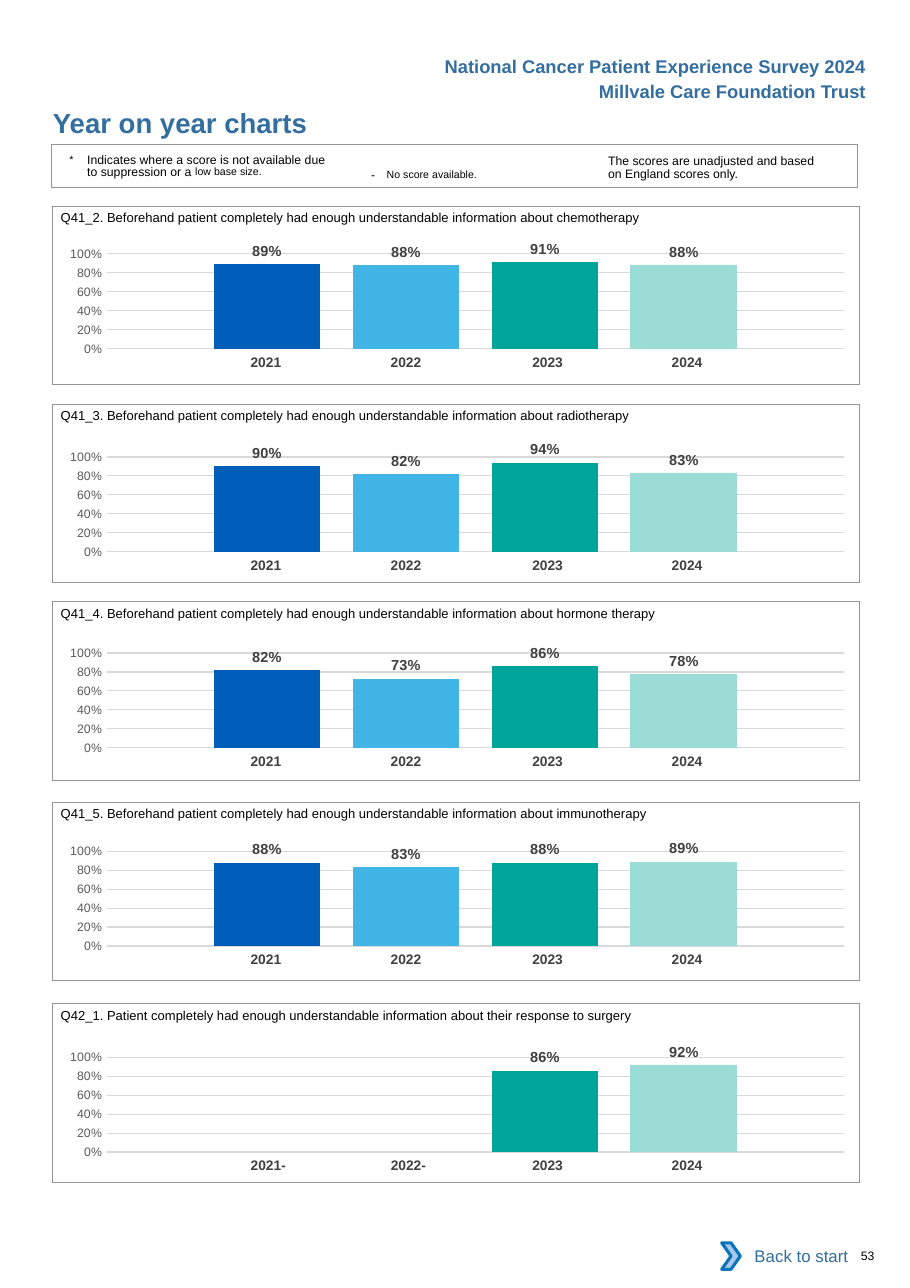
import pptx
import pptx.chart.data
import pptx.dml.color
import pptx.enum.chart
import pptx.enum.shapes
import pptx.enum.text
import pptx.oxml
import pptx.util
from lxml import etree

Cm, Pt = pptx.util.Cm, pptx.util.Pt
RGBColor = pptx.dml.color.RGBColor
Align = pptx.enum.text.PP_ALIGN
Anchor = pptx.enum.text.MSO_ANCHOR
Shape = pptx.enum.shapes.MSO_SHAPE

BLACK = RGBColor(0x00, 0x00, 0x00)
WHITE = RGBColor(0xFF, 0xFF, 0xFF)
BLUE = RGBColor(0x33, 0x6E, 0x9F)
FRAME = RGBColor(0x93, 0x95, 0x98)
YEAR = RGBColor(0x41, 0x40, 0x42)
LABEL = RGBColor(0x40, 0x40, 0x40)
TICK = RGBColor(0x59, 0x59, 0x59)
GRID = RGBColor(0xD9, 0xD9, 0xD9)
ARROW = RGBColor(0xA8, 0xC7, 0xE9)
EDGE = RGBColor(0x0A, 0x74, 0xBB)
BARS = [RGBColor(0x00, 0x5E, 0xB8), RGBColor(0x41, 0xB6, 0xE6),
        RGBColor(0x00, 0xA4, 0x99), RGBColor(0x9C, 0xDC, 0xD7)]

YEARS = ["2021", "2022", "2023", "2024"]
WIDTHS = [3.23, 3.23, 3.4, 3.23]
RIGHTS = [0, 0, 0.1, 0.3]
PLOT = {"x": 0.079, "y": 0.145, "w": 0.915, "h": 0.666}
PLAIN = "{2D5ABB26-0587-4C30-8999-92F81FD0307C}"
ASKED = "Beforehand patient completely had enough understandable information about "

# question, frame top, chart top, scores
PANELS = [
    ("Q41_2. " + ASKED + "chemotherapy", 4.75, 5.38, [0.89, 0.88, 0.91, 0.88]),
    ("Q41_3. " + ASKED + "radiotherapy", 9.32, 10.06, [0.9, 0.82, 0.94, 0.83]),
    ("Q41_4. " + ASKED + "hormone therapy", 13.87, 14.58, [0.82, 0.73, 0.86, 0.78]),
    ("Q41_5. " + ASKED + "immunotherapy", 18.49, 19.15, [0.88, 0.83, 0.88, 0.89]),
    ("Q42_1. Patient completely had enough understandable information about "
     "their response to surgery", 23.14, 23.9, [None, None, 0.86, 0.92]),
]


class Page:
    def __init__(self, slide, face="Arial"):
        self.slide = slide
        self.face = face

    def style(self, font, size, color, bold=False):
        font.name, font.size, font.bold = self.face, Pt(size), bold
        font.color.rgb = color

    def fill(self, frame, words, size, color, bold=False, align=Align.LEFT, pad=(0, 0, 0, 0)):
        """Put one styled paragraph in a text frame, with margins left, top, right, bottom."""
        frame.word_wrap = True
        frame.margin_left, frame.margin_top, frame.margin_right, frame.margin_bottom = map(Cm, pad)
        para = frame.paragraphs[0]
        para.text = words
        para.alignment = align
        self.style(para.font, size, color, bold)
        return para

    def title(self, words, x, y, w, h):
        head = self.slide.shapes.title
        head.left, head.top, head.width, head.height = map(Cm, (x, y, w, h))
        head.text_frame.vertical_anchor = Anchor.TOP
        self.fill(head.text_frame, words, 18, BLUE, True)

    def text(self, words, x, y, w, h, size, color=BLACK, **look):
        box = self.slide.shapes.add_textbox(*map(Cm, (x, y, w, h)))
        return self.fill(box.text_frame, words, size, color, **look)

    def note(self, parts, x, y, w, h, pad, lead=None):
        """Write runs given as text, size, baseline rise and letter spacing."""
        para = self.text("", x, y, w, h, 8, pad=pad)
        para.line_spacing = lead
        for words, size, rise, space in parts:
            run = para.add_run()
            run.text = words
            run.font.size = Pt(size)
            props = run.font._element
            props.set("baseline", str(rise * 1000))
            props.set("spc", str(space))
        return para

    def shape(self, kind, x, y, w, h, fill=None, line=None, weight=0.5):
        item = self.slide.shapes.add_shape(kind, *map(Cm, (x, y, w, h)))
        item.shadow.inherit = False
        if fill is None:
            item.fill.background()
        else:
            item.fill.solid()
            item.fill.fore_color.rgb = fill
        if line is None:
            item.line.fill.background()
        else:
            item.line.color.rgb = line
            item.line.width = Pt(weight)
        return item

    def chart(self, scores, x, y, w, h):
        data = pptx.chart.data.CategoryChartData(number_format="0%")
        data.categories = ["1"]
        for i, score in enumerate(scores, 1):
            data.add_series(f"Series {i}", [score])
        kind = pptx.enum.chart.XL_CHART_TYPE.COLUMN_CLUSTERED
        chart = self.slide.shapes.add_chart(kind, *map(Cm, (x, y, w, h)), data).chart
        chart.has_legend = chart.has_title = False
        chart.font.name, chart.font.size = "Calibri", Pt(10)
        chart.category_axis.visible = False
        axis = chart.value_axis
        axis.minimum_scale, axis.maximum_scale, axis.major_unit = 0, 1, 0.2
        axis.major_tick_mark = pptx.enum.chart.XL_TICK_MARK.NONE
        axis.format.line.fill.background()
        axis.major_gridlines.format.line.color.rgb = GRID
        axis.major_gridlines.format.line.width = Pt(0.75)
        axis.tick_labels.number_format = "0%"
        axis.tick_labels.number_format_is_linked = False
        self.style(axis.tick_labels.font, 8, TICK)
        plot = chart.plots[0]
        plot.gap_width, plot.overlap, plot.vary_by_categories = 200, -30, False
        for series, color in zip(plot.series, BARS):
            series.format.fill.solid()
            series.format.fill.fore_color.rgb = color
            labels = series.data_labels
            labels.show_value = True
            labels.number_format, labels.number_format_is_linked = "0%", False
            labels.position = pptx.enum.chart.XL_LABEL_POSITION.OUTSIDE_END
            self.style(labels.font, 9.5, LABEL, True)
        self.place(chart)

    def place(self, chart):
        """Fix the inner plot area as fractions of the chart."""
        area = chart._chartSpace.chart.plotArea
        for old in area.findall(pptx.oxml.ns.qn("c:layout")):
            area.remove(old)
        layout = etree.Element(pptx.oxml.ns.qn("c:layout"))
        manual = etree.SubElement(layout, pptx.oxml.ns.qn("c:manualLayout"))
        marks = {"layoutTarget": "inner", "xMode": "edge", "yMode": "edge", **PLOT}
        for name, value in marks.items():
            etree.SubElement(manual, pptx.oxml.ns.qn("c:" + name)).set("val", str(value))
        area.insert(0, layout)

    def years(self, names, x, y, h):
        shape = self.slide.shapes.add_table(1, len(names), Cm(x), Cm(y), Cm(sum(WIDTHS)), Cm(h))
        table = shape.table
        table.first_row = table.horz_banding = False
        table._tbl.tblPr.find(pptx.oxml.ns.qn("a:tableStyleId")).text = PLAIN
        table.rows[0].height = Cm(h)
        for i, name in enumerate(names):
            table.columns[i].width = Cm(WIDTHS[i])
            cell = table.cell(0, i)
            cell.fill.background()
            para = cell.text_frame.paragraphs[0]
            para.text = name
            para.alignment = Align.CENTER
            self.style(para.font, 9, YEAR, True)
            cell.margin_left = Cm(0.36 if name.endswith("-") else 0.25)
            cell.margin_right = Cm(RIGHTS[i])
            cell.margin_top = cell.margin_bottom = Cm(0.13)

    def panel(self, words, top, level, scores):
        self.chart(scores, 0.99, level, 18.59, 3.28)
        names = [y if s is not None else y + "-" for y, s in zip(YEARS, scores)]
        self.years(names, 4.39, level + 2.67, 0.69)
        self.shape(Shape.RECTANGLE, 1.22, top, 18.59, 4.11, line=FRAME)
        self.text(words, 1.4, top - 0.15, 18.4, 0.61, 8.5, pad=(0, 0.23, 0, 0))


def main():
    deck = pptx.Presentation()
    deck.slide_width, deck.slide_height = Cm(20.98), Cm(29.69)
    page = Page(deck.slides.add_slide(deck.slide_layouts[5]))

    pad = (0.25, 0.13, 0.25, 0.13)
    heads = ["National Cancer Patient Experience Survey 2024", "Millvale Care Foundation Trust"]
    for i, words in enumerate(heads):
        page.text(words, 8.22, 1.15 + 0.57 * i, 12, 0.76, 12, BLUE,
                  bold=True, align=Align.RIGHT, pad=pad)
    page.title("Year on year charts", 1.22, 2.44, 11.4, 0.76)

    page.shape(Shape.RECTANGLE, 1.19, 3.33, 18.59, 0.99, line=FRAME, weight=0.75)
    slim = (0, 0.08, 0, 0)
    star = page.note([("*\t", 12, 3, 0),
                      ("Indicates where a score is not available due to suppression or a ", 8, 0, 0),
                      ("low base size.", 12, 7, 0)],
                     1.6, 3.51, 6.05, 0.69, slim, Pt(8.1))
    props = star._p.get_or_add_pPr()
    props.set("marL", str(Cm(0.41)))
    props.set("indent", str(-Cm(0.41)))
    page.note([("- ", 8, 0, 260), ("No score available.", 12, 3, 0)],
              8.31, 3.58, 4.65, 0.61, pad)
    page.note([("The scores are unadjusted and based on England scores only.", 8, 0, 0)],
              14.02, 3.51, 5, 0.69, slim, Pt(8.1))

    for row in PANELS:
        page.panel(*row)

    back = page.shape(Shape.RECTANGLE, 16.81, 28.42, 3, 1.07, fill=WHITE)
    back.text_frame.vertical_anchor = Anchor.MIDDLE
    page.fill(back.text_frame, "Back to start", 11, BLUE, align=Align.RIGHT, pad=pad)
    page.shape(Shape.CHEVRON, 16.64, 28.65, 0.43, 0.61, ARROW, EDGE, 2)
    page.text("53", 19.85, 28.78, 1, 0.33, 8)
    deck.save("out.pptx")


if __name__ == "__main__":
    main()
